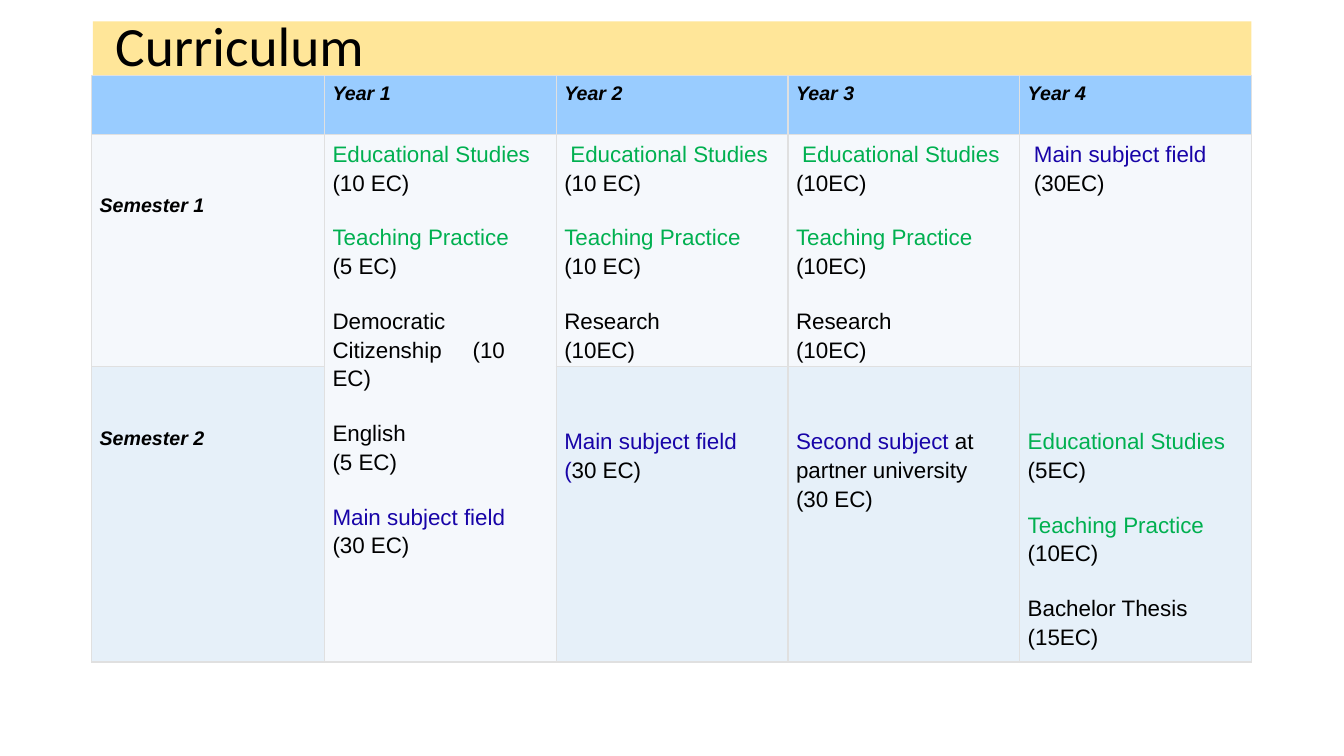
from lxml import etree
from pptx import Presentation
from pptx import util as u
from pptx.dml import color
from pptx.enum import shapes, text
from pptx.oxml import ns

C = {"title": "FFE699", "head": "99CCFF", "body": "DEEBF7", "line": "E0E0E0",
     "black": "000000", "green": "00B050", "blue": "1804A8"}
LABEL = {"name": "Arial", "size": u.Pt(14), "bold": True, "italic": True}
BODY = {"name": "Arial", "size": u.Pt(16), "bold": False, "italic": False}
TITLE = {"name": "Calibri", "size": u.Pt(39.6)}


def add_runs(p, runs, fmt):
    for key, words in runs:
        for i, line in enumerate(words.split("\n")):
            if i:
                p.add_line_break()
            if line:
                r = p.add_run()
                r.text = line
                r.font.color.rgb = color.RGBColor.from_string(C[key])
                for name, value in fmt.items():
                    setattr(r.font, name, value)


def sub(parent, tag, **attrs):
    return etree.SubElement(parent, ns.qn(tag), attrs)


prs = Presentation()
prs.slide_width, prs.slide_height = u.Cm(33.87), u.Cm(19.05)
s = prs.slides.add_slide(prs.slide_layouts[6])

sp = s.shapes.add_shape(shapes.MSO_SHAPE.RECTANGLE, u.Cm(2.34), u.Cm(0.54), u.Cm(29.2), u.Cm(1.37))
sp.shadow.inherit = False
sp.fill.solid()
sp.fill.fore_color.rgb = color.RGBColor.from_string(C["title"])
sp.line.fill.background()
tf = sp.text_frame
tf.vertical_anchor = text.MSO_ANCHOR.MIDDLE
p = tf.paragraphs[0]
p.alignment = text.PP_ALIGN.LEFT
p.line_spacing = 0.9
add_runs(p, [("black", " Curriculum")], TITLE)

rows = [
    [[]] + [[[("black", f"Year {n}")]] for n in range(1, 5)],
    [
        [[("black", "Semester 1")]],
        [[("green", "Educational Studies\n"), ("black", "(10 EC)")],
         [("green", "Teaching Practice\n"), ("black", "(5 EC)")],
         [("black", "Democratic Citizenship\t(10 EC)")],
         [("black", "English\n(5 EC)")],
         [("blue", "Main subject field\n"), ("black", "(30 EC)")]],
        [[("green", " Educational Studies\n"), ("black", "(10 EC)")],
         [("green", "Teaching Practice\n"), ("black", "(10 EC)")],
         [("black", "Research\n(10EC)")]],
        [[("green", " Educational Studies\n"), ("black", "(10EC)")],
         [("green", "Teaching Practice\n"), ("black", "(10EC)")],
         [("black", "Research\n(10EC)")]],
        [[("blue", " Main subject field\n"), ("black", " (30EC)")]],
    ],
    [
        [[("black", "Semester 2")]],
        [],
        [[("blue", "Main subject field\n("), ("black", "30 EC)")]],
        [[("blue", "Second subject "), ("black", "at partner university\n(30 EC)")]],
        [[("green", "Educational Studies\n"), ("black", "(5EC)")],
         [("green", "Teaching Practice\n"), ("black", "(10EC)")],
         [("black", "Bachelor Thesis\n(15EC)")]],
    ],
]
heights = [1.48, 5.84, 7.44]
widths = [5.87] + [5.84] * 4
opacity = [100, 30, 75]

table = s.shapes.add_table(3, 5, u.Cm(2.31), u.Cm(1.91), u.Cm(sum(widths)), u.Cm(sum(heights))).table
table.first_row = table.horz_banding = False
for row, height in zip(table.rows, heights):
    row.height = u.Cm(height)
for column, width in zip(table.columns, widths):
    column.width = u.Cm(width)
table.cell(1, 1).merge(table.cell(2, 1))

for i, row in enumerate(rows):
    for j, paragraphs in enumerate(row):
        cell = table.cell(i, j)
        if i and j == 0:
            top = 1.44
        elif i == 2:
            top = 1.49
        else:
            top = 0.1
        margins = {"margin_left": 0.2, "margin_right": 0.2, "margin_top": top, "margin_bottom": 0.1}
        for name, value in margins.items():
            setattr(cell, name, u.Cm(value))

        shade = 1 if (i, j) == (2, 1) else i
        cell.fill.solid()
        cell.fill.fore_color.rgb = color.RGBColor.from_string(C["body" if i else "head"])
        tcPr = cell._tc.get_or_add_tcPr()
        if i:
            sub(tcPr.find(".//" + ns.qn("a:srgbClr")), "a:alpha", val=str(opacity[shade] * 1000))
        for k, side in enumerate("LRTB"):
            ln = etree.Element(ns.qn("a:ln" + side), w=str(u.Pt(1)))
            sub(sub(ln, "a:solidFill"), "a:srgbClr", val=C["line"])
            tcPr.insert(k, ln)

        tf = cell.text_frame
        for n, runs in enumerate(paragraphs):
            p = tf.add_paragraph() if n else tf.paragraphs[0]
            p.line_spacing = 1.15
            if n < len(paragraphs) - 1:
                p.space_after = u.Pt(18.8)
            if any("\t" in words for key, words in runs):
                tabs = sub(p._p.get_or_add_pPr(), "a:tabLst")
                sub(tabs, "a:tab", pos=str(u.Cm(3.53)), algn="l")
            add_runs(p, runs, LABEL if i == 0 or j == 0 else BODY)

prs.save("out.pptx")
